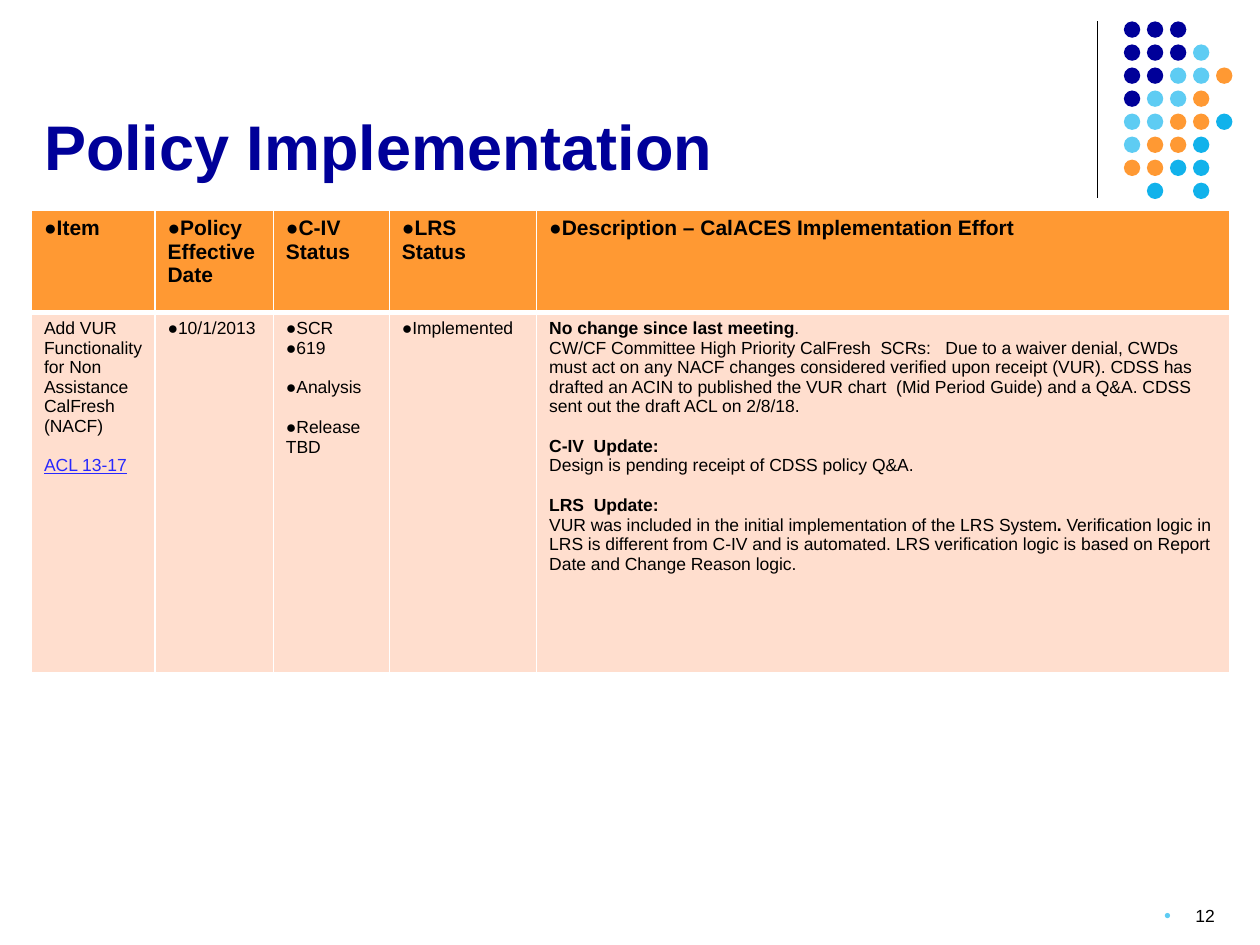
from lxml.etree import SubElement
from pptx import Presentation
from pptx.dml.color import RGBColor
from pptx.enum.shapes import MSO_CONNECTOR as Connector, MSO_SHAPE as Shape
from pptx.enum.text import MSO_ANCHOR as Anchor, PP_ALIGN as Align
from pptx.oxml import parse_xml
from pptx.oxml.ns import nsdecls, qn
from pptx.util import Inches, Pt

NAVY = RGBColor(0x00, 0x00, 0x99)
SKY = RGBColor(0x5E, 0xCC, 0xF3)
ORANGE = RGBColor(0xFF, 0x99, 0x33)
CYAN = RGBColor(0x11, 0xB2, 0xEB)
PEACH = RGBColor(0xFF, 0xDE, 0xCE)
LINK = RGBColor(0x28, 0x28, 0xFE)
BLACK = RGBColor(0x00, 0x00, 0x00)
WHITE = RGBColor(0xFF, 0xFF, 0xFF)

DOT_COLORS = {"N": NAVY, "S": SKY, "O": ORANGE, "C": CYAN}
DOT_ROWS = ["NNN", "NNNS", "NNSSO", "NSSO", "SSOOC", "SOOC", "OOCC", " C C"]

COLUMN_WIDTHS = [0.98, 0.94, 0.92, 1.17, 5.5]
ROW_HEIGHTS = [0.81, 2.86]
HEADERS = ["Item", "Policy Effective Date", "C-IV Status", "LRS Status",
           "Description – CalACES Implementation Effort"]

BOLD = {"bold": True}
GAP = Pt(11.5)


class SlideBuilder:
    font_name = "Arial"

    def __init__(self, presentation):
        self.slide = presentation.slides.add_slide(presentation.slide_layouts[5])

    def add_run(self, paragraph, text, size, color=BLACK, bold=False, underline=False):
        run = paragraph.add_run()
        run.text = text
        font = run.font
        font.name, font.size = self.font_name, Pt(size)
        font.bold, font.underline = bold, underline
        font.color.rgb = color

    def add_bullet(self, paragraph, character, color=None, percent=None, indent=0):
        properties = paragraph._p.get_or_add_pPr()
        properties.set("marL", str(indent))
        properties.set("indent", str(-indent))
        if color is not None:
            holder = SubElement(properties, qn("a:buClr"))
            SubElement(holder, qn("a:srgbClr")).set("val", str(color))
        if percent:
            SubElement(properties, qn("a:buSzPct")).set("val", str(percent * 1000))
        SubElement(properties, qn("a:buFont")).set("typeface", self.font_name)
        SubElement(properties, qn("a:buChar")).set("char", character)

    def add_title(self, text, left, top, width, height):
        title = self.slide.shapes.title
        title.left, title.top = Inches(left), Inches(top)
        title.width, title.height = Inches(width), Inches(height)
        frame = title.text_frame
        frame.word_wrap = True
        frame.vertical_anchor = Anchor.BOTTOM
        paragraph = frame.paragraphs[0]
        paragraph.alignment = Align.LEFT
        self.add_run(paragraph, text, 36, NAVY, bold=True)

    def add_line(self, x, top, bottom):
        line = self.slide.shapes.add_connector(
            Connector.STRAIGHT, Inches(x), Inches(top), Inches(x), Inches(bottom))
        line.line.color.rgb = BLACK
        line.line.width = Pt(0.75)
        SubElement(line._element.spPr, qn("a:effectLst"))

    def add_dots(self, left, top, pitch, diameter):
        group = self.slide.shapes.add_group_shape()
        for row, pattern in enumerate(DOT_ROWS):
            for column, key in enumerate(pattern):
                if key not in DOT_COLORS:
                    continue
                dot = group.shapes.add_shape(
                    Shape.OVAL, Inches(left + column * pitch), Inches(top + row * pitch),
                    Inches(diameter), Inches(diameter))
                dot.shadow.inherit = False
                dot.fill.solid()
                dot.fill.fore_color.rgb = DOT_COLORS[key]
                dot.line.fill.background()

    def add_table(self, left, top, rows):
        frame = self.slide.shapes.add_table(
            len(rows), len(COLUMN_WIDTHS), Inches(left), Inches(top),
            Inches(sum(COLUMN_WIDTHS)), Inches(sum(ROW_HEIGHTS)))
        table = frame.table
        for column, width in zip(table.columns, COLUMN_WIDTHS):
            column.width = Inches(width)
        for row, height in zip(table.rows, ROW_HEIGHTS):
            row.height = Inches(height)
        for row_index, contents in enumerate(rows):
            header = row_index == 0
            for column_index, paragraphs in enumerate(contents):
                cell = table.cell(row_index, column_index)
                self.style_cell(cell, ORANGE if header else PEACH, 3 if header else 1)
                self.fill_cell(cell, paragraphs, 12 if header else 10)

    def style_cell(self, cell, color, bottom_width):
        cell.fill.solid()
        cell.fill.fore_color.rgb = color
        properties = cell._tc.get_or_add_tcPr()
        for index, side in enumerate("LRTB"):
            width = Pt(bottom_width if side == "B" else 1)
            properties.insert(index, parse_xml(
                f'<a:ln{side} {nsdecls("a")} w="{width}"><a:solidFill>'
                f'<a:srgbClr val="{WHITE}"/></a:solidFill></a:ln{side}>'))

    def fill_cell(self, cell, paragraphs, size):
        frame = cell.text_frame
        for index, (runs, bulleted, gap) in enumerate(paragraphs):
            paragraph = frame.add_paragraph() if index else frame.paragraphs[0]
            if gap:
                paragraph.space_before = gap
            if bulleted:
                self.add_bullet(paragraph, "●")
            for text, style in runs:
                self.add_run(paragraph, text, size, **style)

    def add_page_number(self, text, left, top, width, height):
        box = self.slide.shapes.add_textbox(
            Inches(left), Inches(top), Inches(width), Inches(height))
        box.text_frame.word_wrap = True
        paragraph = box.text_frame.paragraphs[0]
        paragraph.alignment = Align.RIGHT
        self.add_bullet(paragraph, "●", SKY, 70, Inches(0.25))
        self.add_run(paragraph, text, 10)


def bullet(text, gap=None, **style):
    return [(text, style)], True, gap


def plain(*runs, gap=None):
    return runs, False, gap


def main():
    presentation = Presentation()
    presentation.slide_width = Inches(10)
    presentation.slide_height = Inches(7.5)

    header = [[bullet(text, bold=True)] for text in HEADERS]
    item = [
        plain(("Add VUR Functionality for Non Assistance CalFresh (NACF)", {})),
        plain(("ACL 13-17", {"color": LINK, "underline": True}), gap=GAP),
    ]
    civ_status = [bullet("SCR"), bullet("619"), bullet("Analysis", GAP),
                  bullet("Release  TBD", GAP)]
    description = [
        plain(("No change since last meeting", BOLD), (".", {})),
        plain(("CW/CF Committee High Priority CalFresh  SCRs:   Due to a waiver denial, "
               "CWDs must act on any NACF changes considered verified upon receipt (VUR). "
               "CDSS has drafted an ACIN to published the VUR chart  (Mid Period Guide) "
               "and a Q&A. CDSS sent out the draft ACL on 2/8/18.", {})),
        plain(("C-IV  Update:", BOLD), gap=GAP),
        plain(("Design is pending receipt of CDSS policy Q&A.", {})),
        plain(("LRS  Update:", BOLD), gap=GAP),
        plain(("VUR was included in the initial implementation of the LRS System", {}),
              (". ", BOLD),
              ("Verification logic in LRS is different from C-IV and is automated. LRS "
               "verification logic is based on Report Date and Change Reason logic.", {})),
    ]
    policy = [item, [bullet("10/1/2013")], civ_status, [bullet("Implemented")], description]

    builder = SlideBuilder(presentation)
    builder.add_line(8.71, 0.17, 1.57)
    builder.add_dots(8.92, 0.17, pitch=1.28 / 7, diameter=0.13)
    builder.add_title("Policy Implementation", 0.25, 0.83, 8.42, 0.67)
    builder.add_table(0.25, 1.67, [header, policy])
    builder.add_page_number("12", 7.41, 7.13, 2.33, 0.33)

    presentation.save("out.pptx")


if __name__ == "__main__":
    main()
